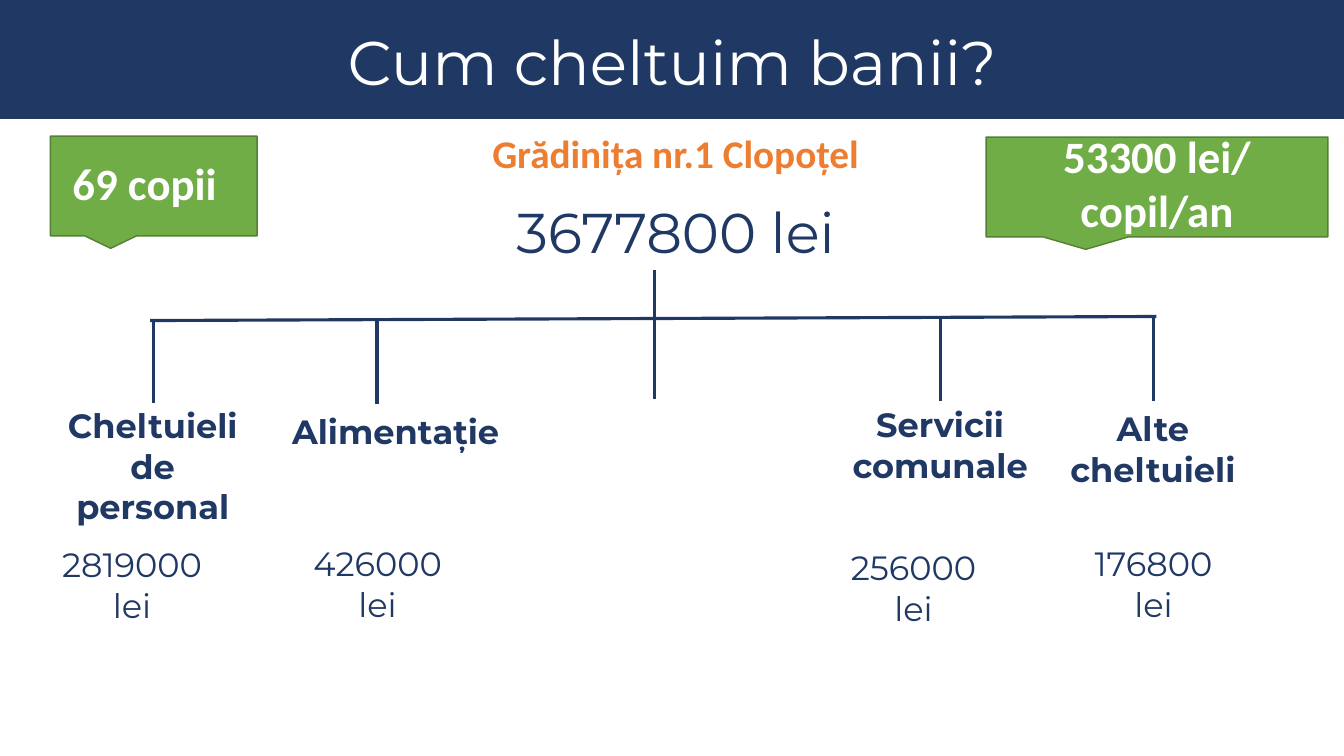
from lxml import etree
from pptx import Presentation
from pptx import util as u
from pptx.dml import color
from pptx.enum import shapes, text
from pptx.oxml import ns

NAVY, GREEN, DARK_GREEN = "203864", "70AD47", "538035"
ORANGE, WHITE = "ED7D31", "FFFFFF"
CENTER, LEFT = text.PP_ALIGN.CENTER, text.PP_ALIGN.LEFT
HEADING = {"name": "Montserrat", "size": u.Pt(24), "bold": True}
AMOUNT = {"name": "Montserrat", "size": u.Pt(24), "bold": False}
TOTAL = {"name": "Montserrat", "size": u.Pt(40), "bold": False}
TITLE = {"name": "Montserrat", "size": u.Pt(44), "bold": False}
SUBTITLE = {"name": "Calibri", "size": u.Pt(28), "bold": True}
BADGE = {"name": "Calibri", "size": u.Pt(32), "bold": True}


def rgb(value):
    """Turn a hex string into a colour."""
    return color.RGBColor.from_string(value)


def inches(box):
    """Turn a box of numbers into lengths."""
    return [u.Inches(value) for value in box]


def write(shape, lines, style, ink, align=CENTER):
    """Fill a shape's text frame with one paragraph per line."""
    frame = shape.text_frame
    frame.text = "\n".join(lines)
    for para in frame.paragraphs:
        para.alignment = align
        for span in para.runs:
            for name, value in style.items():
                setattr(span.font, name, value)
            span.font.color.rgb = rgb(ink)


def add_text(page, box, lines, style, ink=NAVY, align=CENTER, wrap=True):
    """Add a text box holding the given lines."""
    shape = page.shapes.add_textbox(*inches(box))
    shape.text_frame.word_wrap = wrap
    write(shape, lines, style, ink, align)


def add_block(page, kind, box, fill, line=None):
    """Add a flat filled shape, outlined when a line colour is given."""
    shape = page.shapes.add_shape(kind, *inches(box))
    shape.shadow.inherit = False
    shape.fill.solid()
    shape.fill.fore_color.rgb = rgb(fill)
    if line:
        shape.line.color.rgb = rgb(line)
        shape.line.width = u.Pt(1)
    else:
        shape.line.fill.background()


def add_line(page, *ends):
    """Add a navy line between two points."""
    line = page.shapes.add_connector(shapes.MSO_CONNECTOR.STRAIGHT, *inches(ends))
    line.line.color.rgb = rgb(NAVY)
    line.line.width = u.Pt(2.25)
    etree.SubElement(line._element.spPr, ns.qn("a:effectLst"))


def add_header(page, box):
    """Draw the title band and set the title on it."""
    left, top, width, height = box
    add_block(page, shapes.MSO_SHAPE.RECTANGLE, box, NAVY)
    title = page.shapes.title
    page.shapes._spTree.append(title._element)
    place = inches((left + 0.17, top + 0.25, width - 0.33, 0.81))
    for name, value in zip(("left", "top", "width", "height"), place):
        setattr(title, name, value)
    title.text_frame.vertical_anchor = text.MSO_ANCHOR.MIDDLE
    write(title, ["Cum cheltuim banii?"], TITLE, WHITE)
    title.text_frame.paragraphs[0].line_spacing = 0.9


def add_badge(page, box, inset, label, align):
    """Draw a green callout with its label inset from the callout's corner."""
    left, top, width, height = box
    right, down, label_width, label_height = inset
    add_block(page, shapes.MSO_SHAPE.RECTANGULAR_CALLOUT, box, GREEN, DARK_GREEN)
    add_text(page, (left + right, top + down, label_width, label_height),
             [label], BADGE, WHITE, align)


def add_summary(page, box):
    """Write the kindergarten's name and its total spending."""
    left, top, width, height = box
    add_text(page, (left, top, width, 0.57), ["Grădinița nr.1 Clopoțel"], SUBTITLE, ORANGE)
    add_text(page, (left + 2.97, top + 0.68, 7, 0.77), ["3677800 lei"], TOTAL)


def add_tree(page, box):
    """Draw the trunk, the crossbar and one drop for each branch."""
    left, top, width, height = box
    trunk = left + 5
    add_line(page, trunk, top, trunk, top + 0.49)
    add_line(page, left, top + 0.5, left + width, top + 0.46)
    for offset, start in ((0.03, 0.49), (2.25, 0.5), (5, 0.45), (7.84, 0.47), (9.95, 0.47)):
        add_line(page, left + offset, top + start, left + offset, top + start + 0.83)


def add_branch(page, heading_box, heading, amount_box, amount, wrap=True):
    """Write a spending heading with its amount below."""
    add_text(page, heading_box, heading, HEADING, wrap=wrap)
    add_text(page, amount_box, amount, AMOUNT)


def add_branches(page):
    """Write the four spending branches."""
    add_branch(page, (0.48, 3.97, 2.07, 1.31), ["Cheltuieli", "de", "personal"],
               (0.31, 5.35, 2, 0.91), ["2819000 lei"], wrap=False)
    add_branch(page, (2.76, 4.03, 2.33, 0.5), ["Alimentație"],
               (2.47, 5.34, 2.55, 0.91), ["426000", "lei"], wrap=False)
    add_branch(page, (7.71, 3.96, 3.23, 0.91), ["Servicii", "comunale"],
               (7.94, 5.38, 2.24, 0.91), ["256000", "lei"])
    add_branch(page, (10.17, 4, 2.53, 0.91), ["Alte cheltuieli"],
               (10.18, 5.34, 2.52, 0.91), ["176800", "lei"])


def main():
    """Build the deck and save it."""
    deck = Presentation()
    deck.slide_width, deck.slide_height = inches((13.33, 7.5))
    page = deck.slides.add_slide(deck.slide_layouts[5])
    add_header(page, (0, 0, 13.33, 1.18))
    add_summary(page, (0.23, 1.23, 12.94, 1.45))
    add_badge(page, (0.5, 1.35, 2.05, 0.99), (0.12, 0.15, 1.85, 0.64), "69 copii", LEFT)
    add_badge(page, (9.78, 1.36, 3.39, 0.99), (0, -0.13, 3.39, 1.18),
              "53300 lei/ copil/an", CENTER)
    add_tree(page, (1.49, 2.68, 9.98, 1.33))
    add_branches(page)
    deck.save("out.pptx")


if __name__ == "__main__":
    main()
